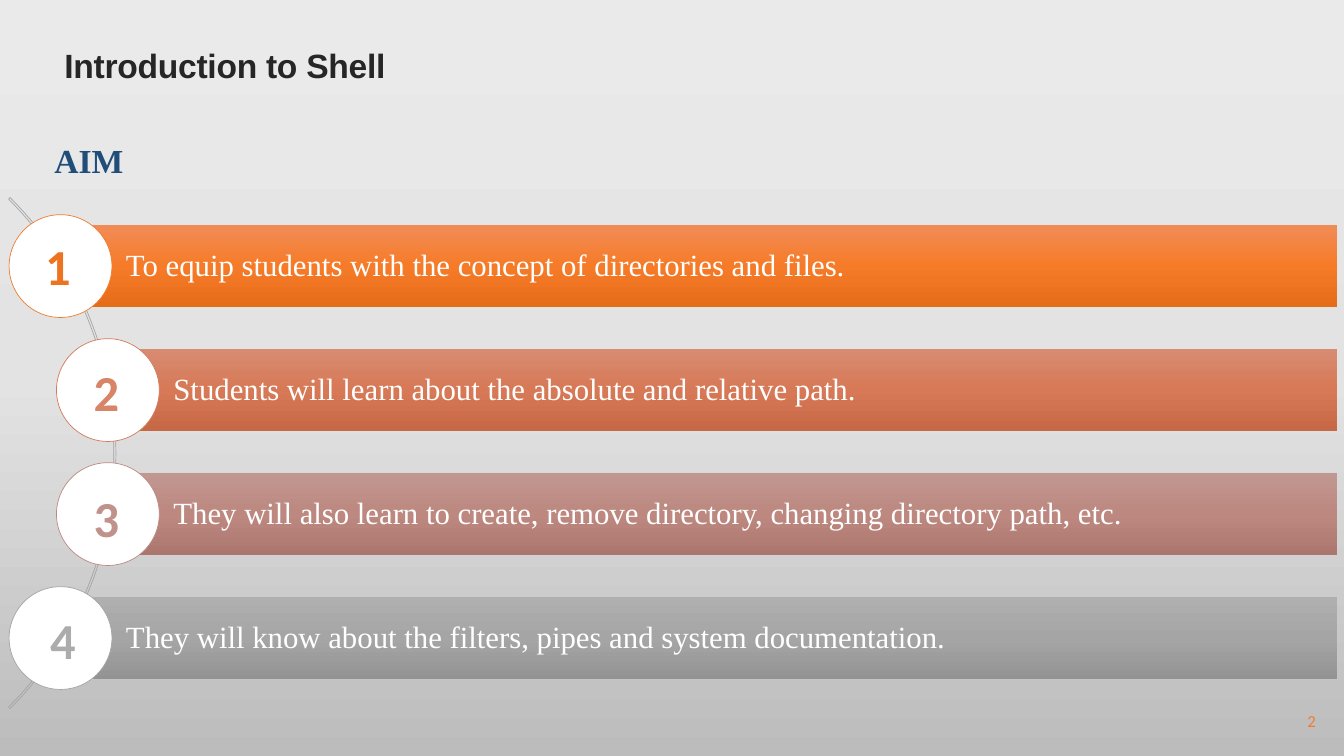
from copy import deepcopy
from dataclasses import dataclass, field

from lxml.etree import _Element
from pptx import Presentation
from pptx.dml.color import RGBColor
from pptx.dml.fill import FillFormat
from pptx.enum.shapes import MSO_SHAPE
from pptx.enum.text import MSO_ANCHOR, MSO_AUTO_SIZE, PP_ALIGN
from pptx.oxml.ns import qn
from pptx.shapes.autoshape import Shape
from pptx.slide import Slide
from pptx.text.text import TextFrame
from pptx.util import Inches, Pt

COLORS = {
    "white": "FFFFFF",
    "arc": "A5A5A5",
    "title": "262626",
    "heading": "1F4E79",
    "page": "ED7D31",
}
BACKGROUND = ("EBEAEA", "E4E3E3", "BDBCBC")

BAR_TOP, BAR_STEP, BAR_RIGHT, BAR_HEIGHT = 2.23, 1.23, 13.26, 0.82
CIRCLE_SIZE = 1.02


@dataclass
class Aim:
    text: str
    bar_left: float
    gradient: tuple[str, str, str]
    outline: str
    number_color: str
    number_left: float
    number_top: float


@dataclass
class Label:
    text: str
    box: tuple[float, float, float, float]
    font: str
    size: int
    color: str
    bold: bool = True
    frame: dict = field(default_factory=dict)
    alignment: PP_ALIGN = PP_ALIGN.LEFT
    spacing: int = 0


AIMS = [
    Aim("To equip students with the concept of directories and files.", 0.6,
        ("F18C57", "F67B28", "E56C19"), "ED7D31", "ED731F", 0.35, 2.28),
    Aim("Students will learn about the absolute and relative path.", 1.07,
        ("D78B72", "D77956", "C66846"), "D17B5C", "D78467", 0.83, 3.53),
    Aim("They will also learn to create, remove directory, changing directory path, etc.", 1.07,
        ("C19791", "BC8880", "AA766E"), "B98A82", "BF928B", 0.83, 4.78),
    Aim("They will know about the filters, pipes and system documentation.", 0.6,
        ("AFAFAF", "A5A5A5", "939393"), "A5A5A5", "ACACAC", 0.4, 5.99),
]

GROWING = {"word_wrap": True, "auto_size": MSO_AUTO_SIZE.SHAPE_TO_FIT_TEXT}
LABELS = [
    Label("2", (12.68, 6.95, 0.47, 0.4), "Calibri", 12, COLORS["page"], False,
          {"word_wrap": True, "vertical_anchor": MSO_ANCHOR.MIDDLE}, PP_ALIGN.RIGHT),
    Label("Introduction to Shell", (0.54, 0.4, 11.2, 0.5), "Arial", 24,
          COLORS["title"], frame=GROWING, spacing=-20),
    Label("AIM", (0.44, 1.34, 12.03, 0.5), "Times New Roman", 24,
          COLORS["heading"], frame=GROWING),
]


def set_values(target: object, values: dict) -> None:
    for name, value in values.items():
        setattr(target, name, value)


def fill_gradient(fill: FillFormat, owner: _Element, colors: tuple[str, str, str]) -> None:
    """Apply an evenly spaced gradient that runs from top to bottom."""
    fill.gradient()
    fill.gradient_angle = 270
    stops = owner.find(".//" + qn("a:gsLst"))
    stops.append(deepcopy(stops[0]))
    for index, (stop, color) in enumerate(zip(fill.gradient_stops, colors)):
        stop.position = index / 2
        stop.color.rgb = RGBColor.from_string(color)


def write(frame: TextFrame, text: str, font: str, size: int, color: str, bold: bool,
          alignment: PP_ALIGN = PP_ALIGN.LEFT, spacing: int = 0) -> None:
    """Fill the frame with one run; spacing is in hundredths of a point."""
    paragraph = frame.paragraphs[0]
    paragraph.alignment = alignment
    run = paragraph.add_run()
    run.text = text
    set_values(run.font, {"name": font, "size": Pt(size), "bold": bold})
    run.font.color.rgb = RGBColor.from_string(color)
    if spacing:
        run._r.get_or_add_rPr().set("spc", str(spacing))


def add_label(slide: Slide, label: Label) -> None:
    frame = slide.shapes.add_textbox(*map(Inches, label.box)).text_frame
    set_values(frame, label.frame)
    write(frame, label.text, label.font, label.size, label.color, label.bold,
          label.alignment, label.spacing)


def add_shape(slide: Slide, kind: MSO_SHAPE, left: float, top: float,
              width: float, height: float) -> Shape:
    shape = slide.shapes.add_shape(kind, *map(Inches, (left, top, width, height)))
    shape.shadow.inherit = False
    return shape


def set_outline(shape: Shape, color: str) -> None:
    shape.line.color.rgb = RGBColor.from_string(color)
    shape.line.width = Pt(0.5)


def add_arc(slide: Slide) -> None:
    arc = add_shape(slide, MSO_SHAPE.BLOCK_ARC, -6.02, 0.91, 7.17, 7.17)
    for index, value in enumerate((189, 27, 0.003)):
        arc.adjustments[index] = value
    arc.fill.background()
    set_outline(arc, COLORS["arc"])


def add_aim(slide: Slide, aim: Aim, top: float) -> None:
    bar = add_shape(slide, MSO_SHAPE.RECTANGLE, aim.bar_left, top,
                    BAR_RIGHT - aim.bar_left, BAR_HEIGHT)
    fill_gradient(bar.fill, bar._element, aim.gradient)
    bar.line.fill.background()
    set_values(bar.text_frame, {
        "word_wrap": True,
        "vertical_anchor": MSO_ANCHOR.MIDDLE,
        "margin_left": Inches(0.65),
        "margin_top": Inches(0.06),
        "margin_right": Inches(0.06),
        "margin_bottom": Inches(0.06),
    })
    write(bar.text_frame, aim.text, "Times New Roman", 22, COLORS["white"], False)
    bar.text_frame.paragraphs[0].line_spacing = 0.9

    circle = add_shape(slide, MSO_SHAPE.OVAL, aim.bar_left - CIRCLE_SIZE / 2,
                       top + (BAR_HEIGHT - CIRCLE_SIZE) / 2, CIRCLE_SIZE, CIRCLE_SIZE)
    circle.fill.solid()
    circle.fill.fore_color.rgb = RGBColor.from_string(COLORS["white"])
    set_outline(circle, aim.outline)


def main() -> None:
    presentation = Presentation()
    presentation.slide_width = Inches(13.33)
    presentation.slide_height = Inches(7.5)
    slide = presentation.slides.add_slide(presentation.slide_layouts[6])
    fill_gradient(slide.background.fill, slide.element, BACKGROUND)

    add_arc(slide)
    for index, aim in enumerate(AIMS):
        add_aim(slide, aim, BAR_TOP + index * BAR_STEP)
    for label in LABELS:
        add_label(slide, label)
    for number, aim in enumerate(AIMS, start=1):
        add_label(slide, Label(str(number), (aim.number_left, aim.number_top, 0.46, 0.71),
                               "Calibri", 36, aim.number_color, frame=GROWING))
    presentation.save("out.pptx")


if __name__ == "__main__":
    main()
